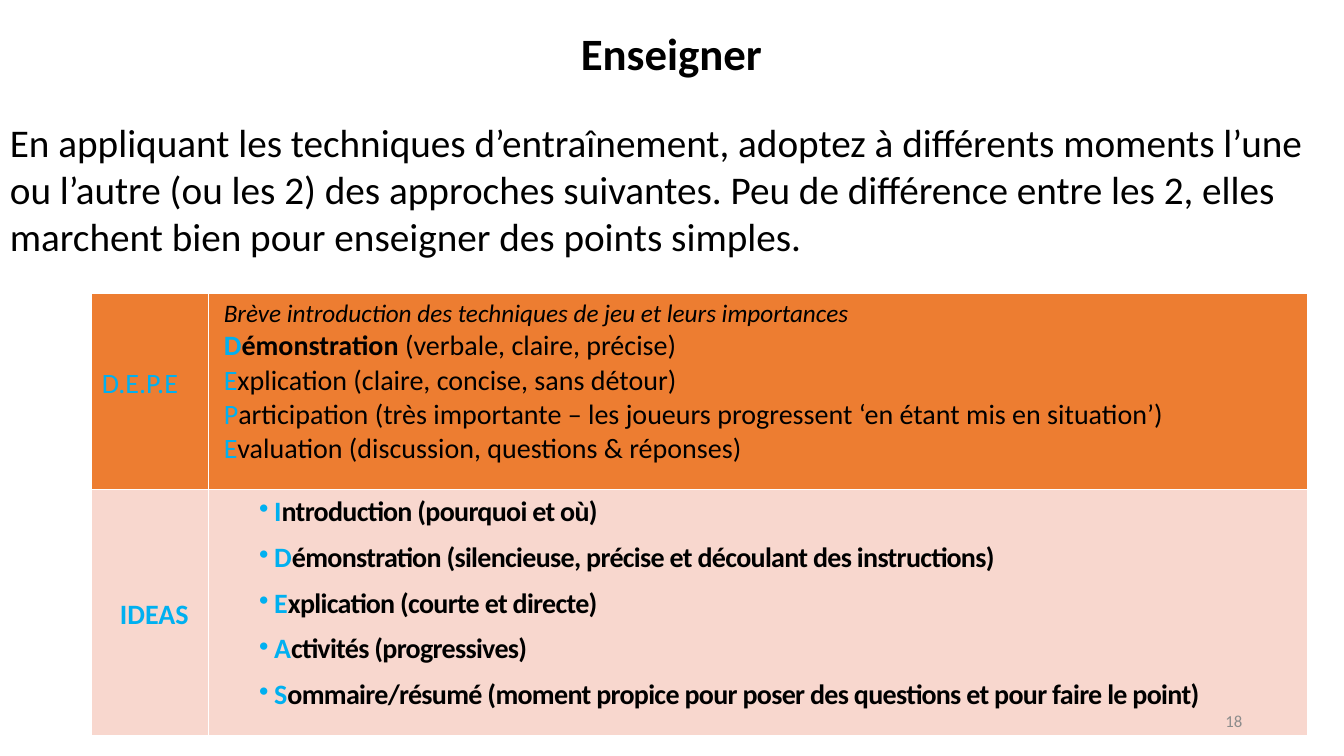
from pptx import Presentation
from pptx.dml.color import RGBColor
from pptx.enum.text import MSO_ANCHOR, MSO_AUTO_SIZE, PP_ALIGN
from pptx.oxml import parse_xml
from pptx.oxml.ns import nsdecls
from pptx.util import Inches, Pt

MIDDLE = MSO_ANCHOR.MIDDLE
FIXED = MSO_AUTO_SIZE.NONE
LEFT, CENTER, RIGHT = PP_ALIGN.LEFT, PP_ALIGN.CENTER, PP_ALIGN.RIGHT
BLACK = RGBColor(0x00, 0x00, 0x00)
GREY = RGBColor(0x8C, 0x8C, 0x8C)
BLUE = RGBColor(0x00, 0xB0, 0xF0)
ORANGE = RGBColor(0xED, 0x7D, 0x31)
PINK = RGBColor(0xF8, 0xD7, 0xCE)
WHITE = RGBColor(0xFF, 0xFF, 0xFF)

INTRO = (
    "En appliquant les techniques d’entraînement, adoptez à différents moments "
    "l’une ou l’autre (ou les 2) des approches suivantes. Peu de différence "
    "entre les 2, elles marchent bien pour enseigner des points simples."
)
BRIEF = "Brève introduction des techniques de jeu et leurs importances"
DEPE = [
    ("D", "émonstration", " (verbale, claire, précise)"),
    ("E", "", "xplication (claire, concise, sans détour)"),
    ("P", "", "articipation (très importante – les joueurs progressent ‘en étant mis en situation’)"),
    ("E", "", "valuation (discussion, questions & réponses)"),
]
IDEAS = [
    "Introduction (pourquoi et où)",
    "Démonstration (silencieuse, précise et découlant des instructions)",
    "Explication (courte et directe)",
    "Activités (progressives)",
    "Sommaire/résumé (moment propice pour poser des questions et pour faire le point)",
]


class Page:
    font = "Calibri"
    unit = Inches(0.1)
    size = 20

    def __init__(self, deck):
        self.slide = deck.slides.add_slide(deck.slide_layouts[5])

    def grid(self, *counts):
        return [round(count * self.unit) for count in counts]

    def style(self, run, size, color, bold=False, italic=False):
        font = run.font
        font.name, font.size = self.font, Pt(size)
        font.bold, font.italic = bold, italic
        font.color.rgb = color

    def fill_text(self, shape, text, size, color, align, bold=False):
        frame = shape.text_frame
        frame.text = text
        frame.word_wrap = True
        frame.auto_size = FIXED
        frame.vertical_anchor = MIDDLE
        para = frame.paragraphs[0]
        para.alignment = align
        self.style(para.runs[0], size, color, bold)

    def title(self, text, place):
        shape = self.slide.shapes.title
        shape.left, shape.top, shape.width, shape.height = self.grid(*place)
        self.fill_text(shape, text, 32, BLACK, CENTER, True)

    def text(self, text, place, size, color, align):
        shape = self.slide.shapes.add_textbox(*self.grid(*place))
        self.fill_text(shape, text, size, color, align)

    def table(self, place, cols, rows, fills):
        frame = self.slide.shapes.add_table(len(rows), len(cols), *self.grid(*place))
        table = frame.table
        table.first_row = table.horz_banding = False
        for col, width in zip(table.columns, self.grid(*cols)):
            col.width = width
        for row, height, fill in zip(table.rows, self.grid(*rows), fills):
            row.height = height
            for cell in row.cells:
                self.border(cell)
                cell.fill.solid()
                cell.fill.fore_color.rgb = fill
        return table

    def border(self, cell):
        props = cell._tc.get_or_add_tcPr()
        for side in "LRTB":
            props.append(parse_xml(
                f'<a:ln{side} {nsdecls("a")} w="12700"><a:solidFill>'
                f'<a:srgbClr val="{WHITE}"/></a:solidFill></a:ln{side}>'
            ))

    def label(self, cell, text, left, top, bold):
        cell.margin_left, cell.margin_top = self.grid(left, top)
        cell.text_frame.text = text
        self.style(cell.text_frame.paragraphs[0].runs[0], self.size, BLUE, bold)

    def line(self, frame, index, parts):
        para = frame.paragraphs[0] if index == 0 else frame.add_paragraph()
        for text, *look in parts:
            if text:
                run = para.add_run()
                run.text = text
                self.style(run, *look)
        return para

    def steps(self, cell, brief, items):
        cell.margin_left, = self.grid(1.5)
        frame = cell.text_frame
        self.line(frame, 0, [(brief, 18, BLACK, False, True)])
        for index, (lead, strong, rest) in enumerate(items, 1):
            self.line(frame, index, [
                (lead, self.size, BLUE, bool(strong)),
                (strong, self.size, BLACK, True),
                (rest, self.size, BLACK),
            ])

    def bullets(self, cell, items):
        margin, hang = self.grid(5.5, 1.5)
        for index, item in enumerate(items):
            para = self.line(cell.text_frame, index, [
                (item[0], self.size, BLUE, True),
                (item[1:], self.size, BLACK, True),
            ])
            para.space_before = Pt(8.2 if index else 4.2)
            for run in para.runs:
                run._r.get_or_add_rPr().set("spc", "-50")
            props = para._p.get_or_add_pPr()
            props.set("marL", str(margin))
            props.set("indent", str(-hang))
            props.append(parse_xml(f'<a:buChar {nsdecls("a")} char="•"/>'))


def main():
    deck = Presentation()
    deck.slide_width, deck.slide_height = Inches(13.33), Inches(7.5)
    page = Page(deck)
    page.title("Enseigner", (16.6, 2, 100, 6.4))
    page.text(INTRO, (0, 11.2, 131, 15.1), 28, BLACK, LEFT)
    table = page.table((9.1, 29.1, 120.6, 43.9), (11.6, 109), (19.5, 24.4), (ORANGE, PINK))
    page.label(table.cell(0, 0), "D.E.P.E", 1, 7.3, False)
    page.steps(table.cell(0, 1), BRIEF, DEPE)
    page.label(table.cell(1, 0), "IDEAS", 2.8, 10.7, True)
    page.bullets(table.cell(1, 1), IDEAS)
    page.text("18", (94.2, 69.5, 30, 4), 12, GREY, RIGHT)
    deck.save("out.pptx")


if __name__ == "__main__":
    main()
